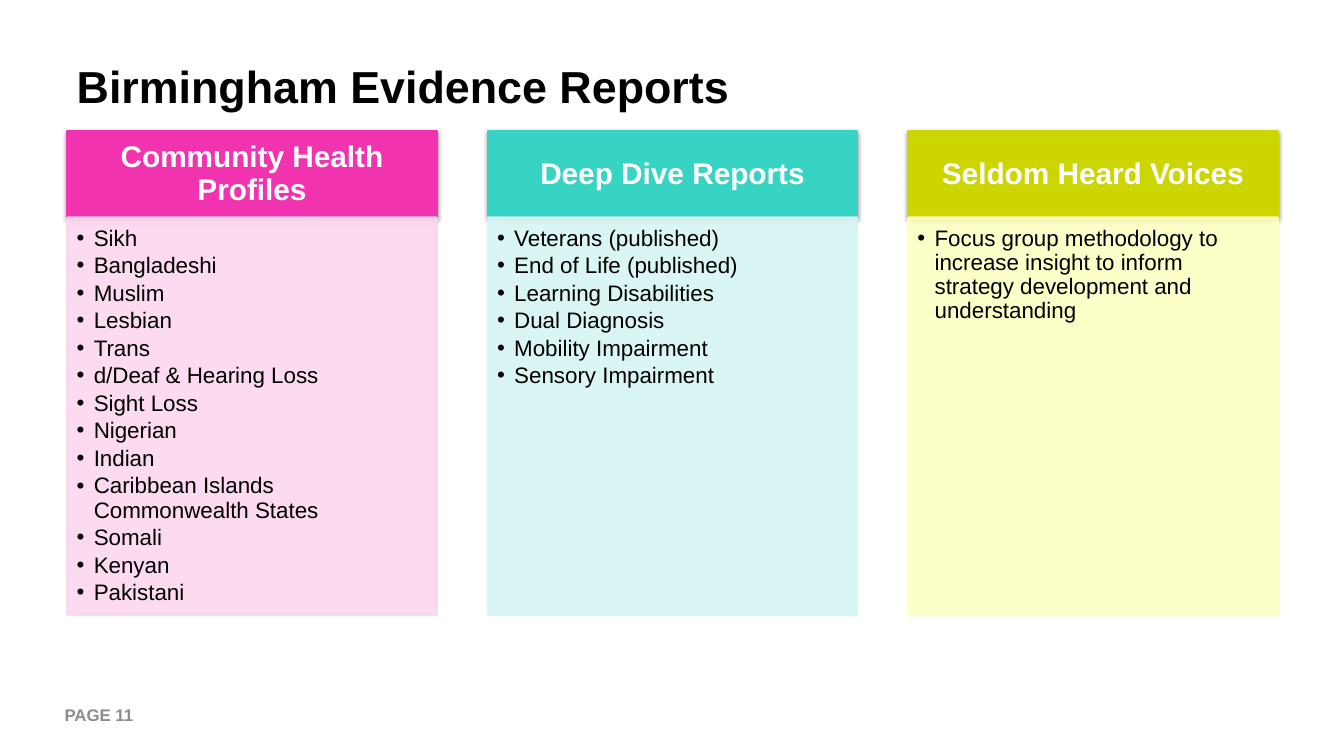
from pptx import Presentation
from pptx.dml.color import RGBColor
from pptx.enum.shapes import MSO_SHAPE
from pptx.enum.text import MSO_ANCHOR, PP_ALIGN
from pptx.oxml.ns import qn
from pptx.util import Inches, Pt
from lxml import etree

RECT = MSO_SHAPE.RECTANGLE
TOP, MIDDLE = MSO_ANCHOR.TOP, MSO_ANCHOR.MIDDLE
LEFT, CENTER = PP_ALIGN.LEFT, PP_ALIGN.CENTER

# Content
TITLE = "Birmingham Evidence Reports"
PAGE = "PAGE 11"
REPORTS = [
    ("Community Health Profiles", "F233B0", "FCD6EF",
     ["Sikh", "Bangladeshi", "Muslim", "Lesbian", "Trans",
      "d/Deaf & Hearing Loss", "Sight Loss", "Nigerian", "Indian",
      "Caribbean Islands Commonwealth States", "Somali", "Kenyan", "Pakistani"]),
    ("Deep Dive Reports", "37D4C3", "D7F6F3",
     ["Veterans (published)", "End of Life (published)", "Learning Disabilities",
      "Dual Diagnosis", "Mobility Impairment", "Sensory Impairment"]),
    ("Seldom Heard Voices", "CDD500", "FDFFC4",
     ["Focus group methodology to increase insight to inform "
      "strategy development and understanding"]),
]

# Theme: (size, colour, bold) for each kind of text
THEME = {
    "font": "Arial",
    "title": (32, "000000", True),
    "page": (12, "8C8C8C", True),
    "header": (21.3, "FFFFFF", True),
    "item": (16, "000000", False),
}

# Grid, in inches
SLIDE_W, SLIDE_H = 13.33, 7.5
MARGIN, COL_W, GAP = 0.67, 3.66, 0.51
HEADER_TOP, HEADER_H, BODY_H = 1.3, 0.86, 3.94
TEXT_INSETS = (0.09, 0.04, 0.09, 0.04)
HEADER_INSETS = (0.17, 0.09, 0.17, 0.09)
BODY_INSETS = (0.09, 0.09, 0.12, 0.14)
BULLET_INDENT = Inches(0.17)


def add_child(parent, tag, **attrs):
    return etree.SubElement(parent, qn(tag), {k: str(v) for k, v in attrs.items()})


def set_frame(sp, insets, anchor):
    tf = sp.text_frame
    tf.word_wrap = True
    tf.vertical_anchor = anchor
    tf.margin_left, tf.margin_top, tf.margin_right, tf.margin_bottom = map(Inches, insets)
    return tf


def write(p, text, style, align=LEFT):
    size, color, bold = THEME[style]
    p.alignment = align
    r = p.add_run()
    r.text = text
    r.font.name, r.font.size, r.font.bold = THEME["font"], Pt(size), bold
    r.font.color.rgb = RGBColor.from_string(color)


def space_lines(p, after_percent):
    p.line_spacing = 0.9
    p.space_after = Pt(0)
    after = p._p.pPr.find(qn("a:spcAft"))
    after.remove(after[0])
    add_child(after, "a:spcPct", val=after_percent * 1000)


def add_bullet(p):
    pPr = p._p.get_or_add_pPr()
    pPr.set("marL", str(BULLET_INDENT))
    pPr.set("indent", str(-BULLET_INDENT))
    add_child(pPr, "a:buFont", typeface=THEME["font"])
    add_child(pPr, "a:buChar", char="•")


def add_label(slide, box, text, style):
    tf = set_frame(slide.shapes.add_textbox(*map(Inches, box)), TEXT_INSETS, MIDDLE)
    write(tf.paragraphs[0], text, style)


def add_panel(slide, box, color):
    sp = slide.shapes.add_shape(RECT, *map(Inches, box))
    sp.shadow.inherit = False
    sp.fill.solid()
    sp.fill.fore_color.rgb = sp.line.color.rgb = RGBColor.from_string(color)
    sp.line.width = Pt(2)
    return sp


def add_shadow(sp):
    effects = sp._element.spPr.find(qn("a:effectLst"))
    shadow = add_child(effects, "a:outerShdw", blurRad=Pt(3.1), dist=Pt(1.6),
                       dir=90 * 60000, rotWithShape=0)
    add_child(add_child(shadow, "a:srgbClr", val="000000"), "a:alpha", val=38000)


def fade(sp):
    for color in sp._element.spPr.iter(qn("a:srgbClr")):
        add_child(color, "a:alpha", val=90000)


def add_report(slide, col, heading, dark, pale, items):
    x = MARGIN + col * (COL_W + GAP)

    # Heading
    sp = add_panel(slide, (x, HEADER_TOP, COL_W, HEADER_H), dark)
    add_shadow(sp)
    p = set_frame(sp, HEADER_INSETS, MIDDLE).paragraphs[0]
    space_lines(p, 35)
    write(p, heading, "header", CENTER)

    # Bulleted list
    sp = add_panel(slide, (x, HEADER_TOP + HEADER_H, COL_W, BODY_H), pale)
    fade(sp)
    tf = set_frame(sp, BODY_INSETS, TOP)
    for i, item in enumerate(items):
        p = tf.add_paragraph() if i else tf.paragraphs[0]
        p.level = 1
        space_lines(p, 15)
        add_bullet(p)
        write(p, item, "item")


def main():
    prs = Presentation()
    prs.slide_width, prs.slide_height = Inches(SLIDE_W), Inches(SLIDE_H)
    slide = prs.slides.add_slide(prs.slide_layouts[6])
    add_label(slide, (MARGIN, 0.3, SLIDE_W - 2 * MARGIN, 1.09), TITLE, "title")
    add_label(slide, (0.55, 6.89, 3.11, 0.4), PAGE, "page")
    for col, report in enumerate(REPORTS):
        add_report(slide, col, *report)
    prs.save("out.pptx")


if __name__ == "__main__":
    main()
